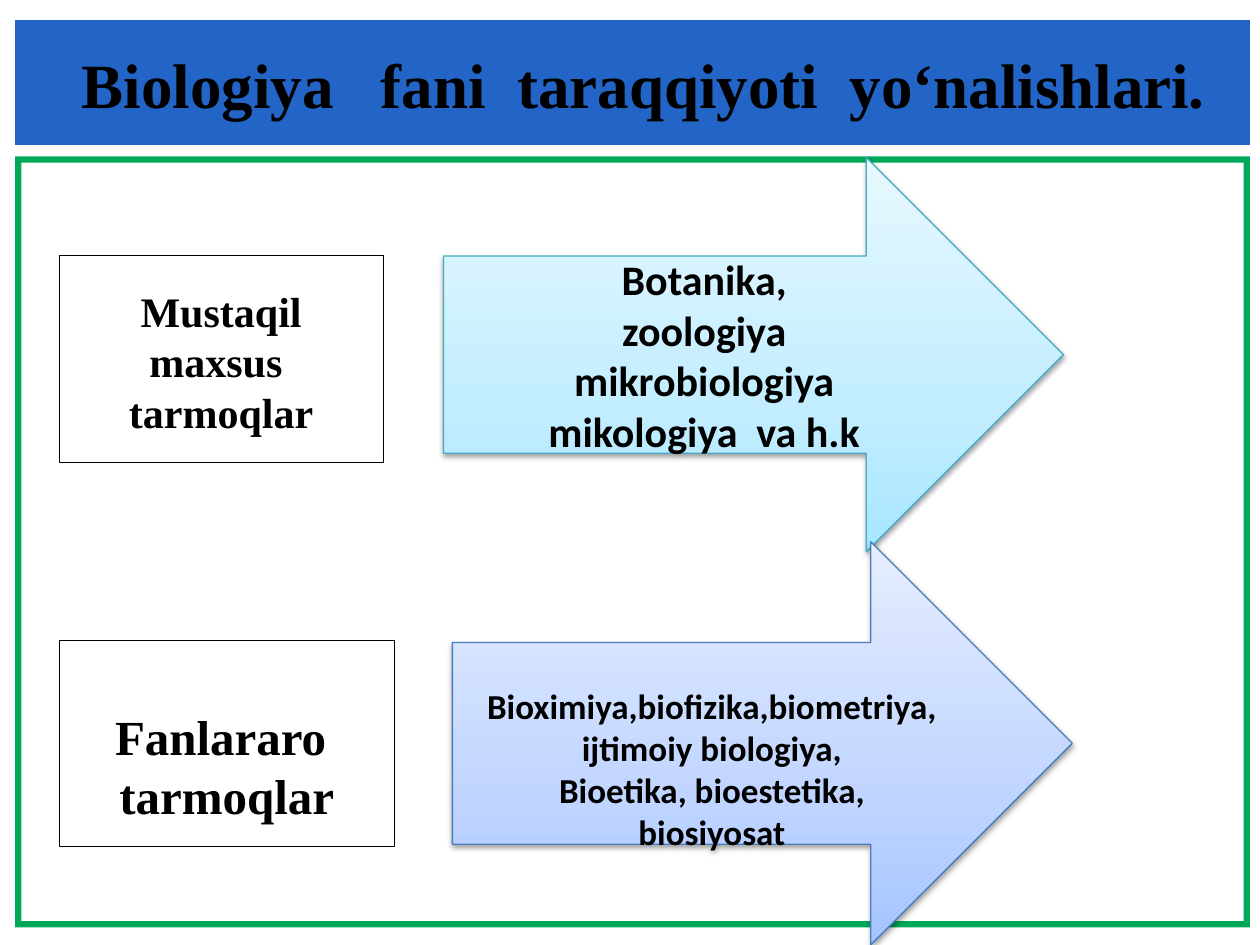
from copy import deepcopy

from lxml import etree
from pptx import Presentation
from pptx.dml.color import RGBColor
from pptx.enum.shapes import MSO_SHAPE
from pptx.enum.text import MSO_ANCHOR, MSO_AUTO_SIZE, PP_ALIGN
from pptx.oxml.ns import qn
from pptx.util import Inches, Pt

BLACK = RGBColor(0x00, 0x00, 0x00)
WHITE = RGBColor(0xFF, 0xFF, 0xFF)
GREEN = RGBColor(0x00, 0xA8, 0x59)
BLUE = RGBColor(0x23, 0x65, 0xC7)
TEAL_LINE = RGBColor(0x46, 0xAA, 0xC5)
BLUE_LINE = RGBColor(0x4B, 0x7E, 0xBC)
TEAL_STOPS = [RGBColor(0xA7, 0xE6, 0xFF), RGBColor(0xC1, 0xED, 0xFF), RGBColor(0xE7, 0xF8, 0xFF)]
BLUE_STOPS = [RGBColor(0xA4, 0xC4, 0xFF), RGBColor(0xBF, 0xD4, 0xFF), RGBColor(0xE6, 0xEE, 0xFF)]
STOP_POSITIONS = [0, 0.35, 1]
SERIF = "Times New Roman"
SANS = "Calibri"


class SlideBuilder:
    """Holds the text style and the current slide, and adds its elements."""

    def __init__(self, slide):
        self.slide = slide
        self.font_format = {"bold": True}

    def set_text(self, shape, lines, font, size, paragraph_format, frame_format):
        frame = shape.text_frame
        frame.text = "\n".join(lines)
        for name, value in {"word_wrap": True, **frame_format}.items():
            setattr(frame, name, value)
        for para in frame.paragraphs:
            for name, value in paragraph_format.items():
                setattr(para, name, value)
            for span in para.runs:
                for name, value in {**self.font_format, "name": font, "size": Pt(size)}.items():
                    setattr(span.font, name, value)
                span.font.color.rgb = BLACK

    def shape(self, kind, place, fill=None, line=None, line_width=0.5):
        shape = self.slide.shapes.add_shape(kind, *map(Inches, place))
        shape.shadow.inherit = False
        if fill is not None:
            shape.fill.solid()
            shape.fill.fore_color.rgb = fill
        if line is None:
            shape.line.fill.background()
        else:
            shape.line.color.rgb = line
            shape.line.width = Pt(line_width)
        return shape

    def frame(self, place, thickness, color):
        frame = self.shape(MSO_SHAPE.FRAME, place, color)
        frame.adjustments[0] = thickness / min(place[2:])

    def title(self, place, text):
        title = self.slide.shapes.title
        title.left, title.top, title.width, title.height = map(Inches, place)
        self.slide.shapes.element.append(title.element)
        self.set_text(title, [text], SERIF, 36, {"alignment": PP_ALIGN.LEFT},
                      {"vertical_anchor": MSO_ANCHOR.TOP, "auto_size": MSO_AUTO_SIZE.NONE})

    def box(self, place, text, size, line_spacing, top_inset):
        box = self.shape(MSO_SHAPE.RECTANGLE, place, WHITE, BLACK)
        self.set_text(box, [text], SERIF, size,
                      {"alignment": PP_ALIGN.CENTER, "line_spacing": Pt(line_spacing)},
                      {"vertical_anchor": MSO_ANCHOR.TOP, "margin_top": Inches(top_inset)})

    def arrow(self, place, lines, size, colors, line, frame_format):
        arrow = self.shape(MSO_SHAPE.RIGHT_ARROW, place, None, line, 0.75)
        arrow.fill.gradient()
        arrow.fill.gradient_angle = 90
        first_stop = arrow.element.spPr.find(".//" + qn("a:gs"))
        first_stop.addnext(deepcopy(first_stop))
        for stop, color, position in zip(arrow.fill.gradient_stops, colors, STOP_POSITIONS):
            stop.color.rgb = color
            stop.position = position
        effects = arrow.element.spPr.find(qn("a:effectLst"))
        shadow = etree.SubElement(effects, qn("a:outerShdw"), blurRad=str(int(Pt(3.1))),
                                  dist=str(int(Pt(1.6))), dir="5400000", rotWithShape="0")
        shade = etree.SubElement(shadow, qn("a:srgbClr"), val=str(BLACK))
        etree.SubElement(shade, qn("a:alpha"), val="38000")
        self.set_text(arrow, lines, SANS, size, {"alignment": PP_ALIGN.CENTER}, frame_format)


def main():
    deck = Presentation()
    deck.slide_width, deck.slide_height = Inches(10), Inches(7.5)
    page = SlideBuilder(deck.slides.add_slide(deck.slide_layouts[5]))

    page.frame((0.12, 1.24, 9.8, 6.12), 0.05, GREEN)
    page.shape(MSO_SHAPE.RECTANGLE, (0.12, 0.16, 9.8, 0.99), BLUE)
    page.title((0.55, 0.31, 9.38, 0.71), "Biologiya   fani  taraqqiyoti  yo‘nalishlari.")

    page.box((0.47, 2.03, 2.57, 1.64), "Mustaqil maxsus  tarmoqlar", 24, 29, 0.23)
    page.arrow((3.52, 1.25, 4.92, 3.13),
               ["Botanika,", "zoologiya", "mikrobiologiya", "mikologiya  va h.k"],
               24, TEAL_STOPS, TEAL_LINE, {"vertical_anchor": MSO_ANCHOR.MIDDLE})

    page.box((0.47, 5.08, 2.66, 1.64), "Fanlararo  tarmoqlar", 28, 34, 0.52)
    page.arrow((3.59, 4.3, 4.92, 3.2),
               ["Bioximiya,biofizika,biometriya,", "ijtimoiy biologiya,",
                "Bioetika, bioestetika,", "biosiyosat"],
               20, BLUE_STOPS, BLUE_LINE,
               {"vertical_anchor": MSO_ANCHOR.TOP, "margin_top": Inches(0.33), "margin_bottom": 0})

    deck.save("out.pptx")


if __name__ == "__main__":
    main()
